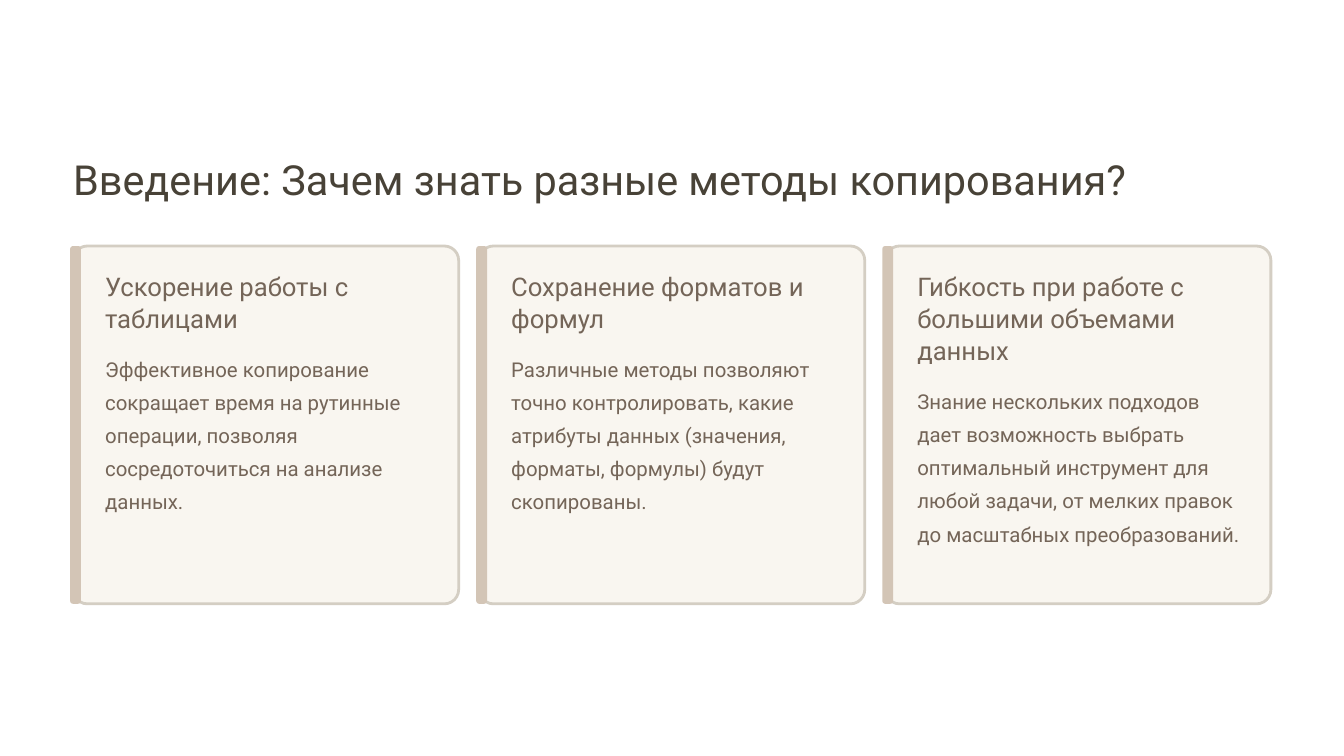
from pptx import Presentation
from pptx.dml.color import RGBColor
from pptx.enum.shapes import MSO_SHAPE
from pptx.util import Cm, Pt

ROUNDED = MSO_SHAPE.ROUNDED_RECTANGLE
FONT = "Roboto"
COLORS = {
    "title": "484237",
    "text": "746558",
    "card": "F9F6F0",
    "border": "D4CEC3",
    "accent": "D3C5B6",
}

LEFT, CARD_TOP = 2.21, 7.44
CARD_WIDTH, CARD_HEIGHT, CARD_PITCH = 11.66, 10.82, 12.28
TEXT_INDENT, TEXT_TOP, TEXT_WIDTH = 0.97, 8.15, 9.98
HEADING_LINE, BODY_LINE, HEADING_GAP = 0.97, 1.01, 0.43

TITLE = "Введение: Зачем знать разные методы копирования?"
# Heading, its line count, body, its height in lines
CARDS = [
    ("Ускорение работы с таблицами", 2,
     "Эффективное копирование сокращает время на рутинные операции, "
     "позволяя сосредоточиться на анализе данных.", 5),
    ("Сохранение форматов и формул", 2,
     "Различные методы позволяют точно контролировать, какие атрибуты "
     "данных (значения, форматы, формулы) будут скопированы.", 5),
    ("Гибкость при работе с большими объемами данных", 3,
     "Знание нескольких подходов дает возможность выбрать оптимальный "
     "инструмент для любой задачи, от мелких правок до масштабных "
     "преобразований.", 6),
]


def add_text(page, text, left, top, width, height, size, spacing, color, wrap=True):
    box = page.shapes.add_textbox(Cm(left), Cm(top), Cm(width), Cm(height))
    frame = box.text_frame
    frame.word_wrap = wrap
    frame.margin_left = frame.margin_right = 0
    frame.margin_top = frame.margin_bottom = 0
    frame.text = text
    para = frame.paragraphs[0]
    para.line_spacing = Pt(spacing)
    span = para.runs[0]
    span.font.name = FONT
    span.font.size = Pt(size)
    span.font.color.rgb = RGBColor.from_string(COLORS[color])


def add_panel(page, left, width, radius, fill, border=None):
    """Add a full-height rounded rectangle in the card row."""
    panel = page.shapes.add_shape(
        ROUNDED, Cm(left), Cm(CARD_TOP), Cm(width), Cm(CARD_HEIGHT))
    panel.adjustments[0] = radius
    panel.shadow.inherit = False
    panel.fill.solid()
    panel.fill.fore_color.rgb = RGBColor.from_string(COLORS[fill])
    if border:
        panel.line.color.rgb = RGBColor.from_string(COLORS[border])
        panel.line.width = Pt(2.4)
    else:
        panel.line.fill.background()


def add_card(page, left, heading, heading_lines, body, body_lines):
    add_panel(page, left, CARD_WIDTH, 0.04, "card", "border")
    add_panel(page, left - 0.09, 0.33, 0.28, "accent")
    text_left = left + TEXT_INDENT
    heading_height = heading_lines * HEADING_LINE
    add_text(page, heading, text_left, TEXT_TOP, TEXT_WIDTH, heading_height,
             22, 27.5, "text")
    add_text(page, body, text_left, TEXT_TOP + heading_height + HEADING_GAP,
             TEXT_WIDTH, body_lines * BODY_LINE, 17.5, 28.5, "text")


def main():
    deck = Presentation()
    deck.slide_width, deck.slide_height = Cm(40.64), Cm(22.86)
    page = deck.slides.add_slide(deck.slide_layouts[6])
    add_text(page, TITLE, LEFT, 4.6, 33.4, 1.57, 35.5, 44.5, "title", wrap=False)
    for index, card in enumerate(CARDS):
        add_card(page, LEFT + index * CARD_PITCH, *card)
    deck.save("out.pptx")


if __name__ == "__main__":
    main()
